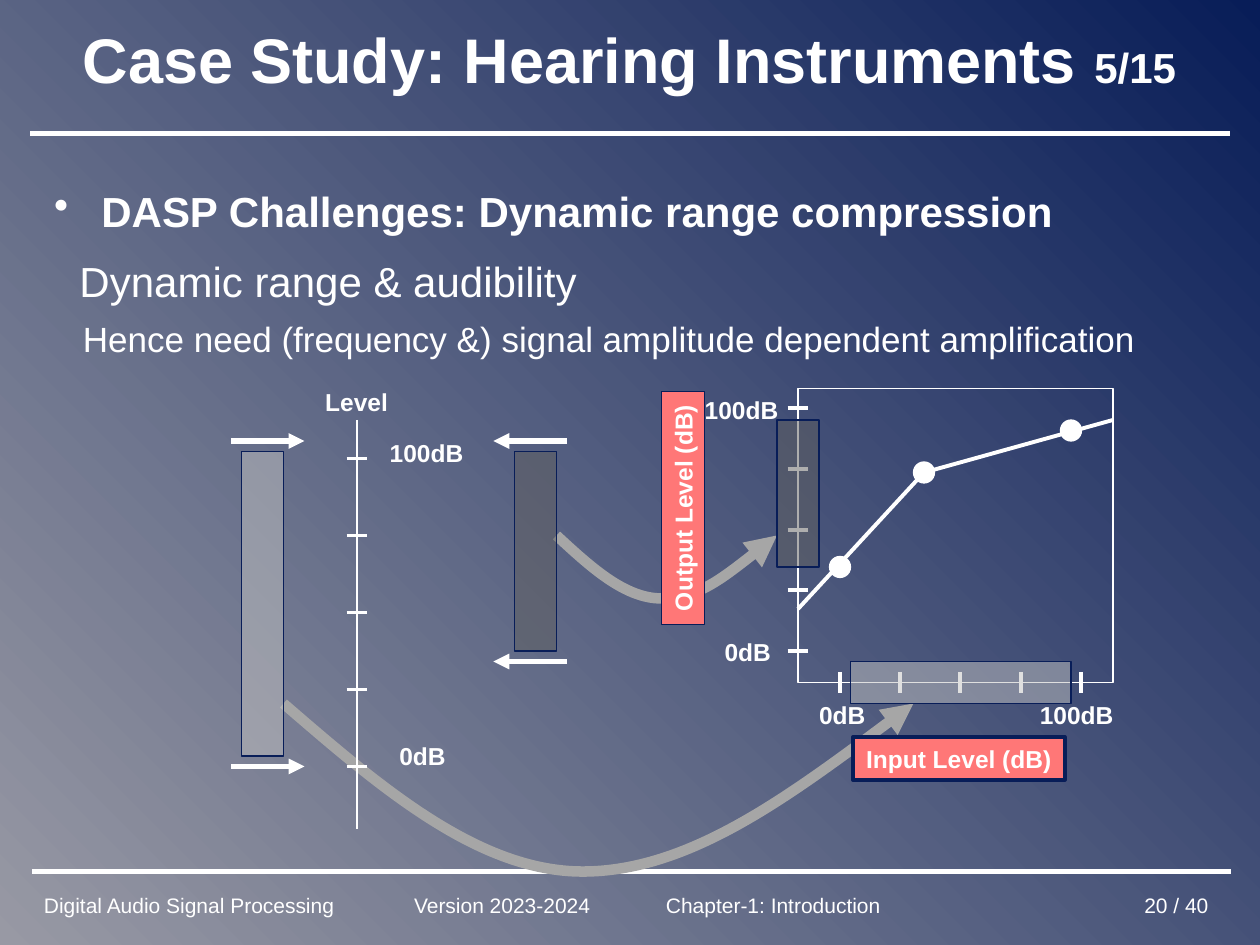
"""Build a slide on dynamic range compression in hearing instruments."""
from dataclasses import dataclass
from typing import NamedTuple, Optional

from lxml.etree import SubElement as Sub
from pptx import Presentation
from pptx.dml.color import RGBColor as Rgb
from pptx.enum.shapes import MSO_CONNECTOR as Link, MSO_SHAPE as Kind
from pptx.enum.text import MSO_ANCHOR as Anchor, PP_ALIGN as Align
from pptx.oxml.ns import qn
from pptx.util import Pt


@dataclass(frozen=True)
class Theme:
    font: str = "Arial"
    white: Rgb = Rgb(0xFF, 0xFF, 0xFF)
    navy: Rgb = Rgb(0x08, 0x1D, 0x58)
    haze: Rgb = Rgb(0x98, 0x99, 0xA4)
    curve: Rgb = Rgb(0xA6, 0xA6, 0xA6)
    light: Rgb = Rgb(0xC0, 0xC0, 0xC0)
    dark: Rgb = Rgb(0x5F, 0x5F, 0x5F)
    red: Rgb = Rgb(0xFF, 0x77, 0x77)
    title: int = 36
    head: int = 24
    body: int = 20
    label: int = 14
    foot: int = 12


class Box(NamedTuple):
    left: float
    top: float
    width: float
    height: float
    turn: float = 0


class Stroke(NamedTuple):
    x1: float
    y1: float
    x2: float
    y2: float
    weight: float = 2.25
    arrow: bool = False


class Label(NamedTuple):
    text: str
    box: Box


class Point(NamedTuple):
    text: str
    size: int
    bold: bool
    indent: float
    gap: float
    bullet: bool = False


THEME = Theme()

RULES = [Stroke(702.7, 76.3, 17.3, 76.3, 3), Stroke(703.4, 498.2, 18, 498.2, 3)]
FOOTER = [
    Label("Digital Audio Signal Processing", Box(18, 504, 190, 26.6)),
    Label("Version 2023-2024", Box(229.5, 504, 120, 26.6)),
    Label("Chapter-1: Introduction", Box(373.5, 504, 150, 26.6)),
]
PAGE = Label("20 / 40", Box(553.7, 504, 144, 26.6))
CURVES = [
    [(318, 306), (337.5, 324), (357, 342), (378, 342), (399, 342), (421.5, 324), (444, 306)],
    [(162, 402), (217.5, 450), (273.5, 498), (333, 498), (393, 498), (458, 450), (522, 402)],
]
POINTS = [
    Point("DASP Challenges: Dynamic range compression", THEME.head, True, 27, 0, True),
    Point("Dynamic range & audibility", THEME.head, False, 14.5, 11),
    Point("Hence need (frequency &) signal amplitude dependent amplification",
          THEME.body, False, 16.5, 7),
]
LEVEL = [Stroke(204, 240, 204, 474, 0.75)] + [
    Stroke(198, 262 + 44 * i, 210, 262 + 44 * i) for i in range(5)]
ARROWS = [Stroke(132, y, 174, y, 3, True) for y in (438, 252)] + [
    Stroke(324, y, 282, y, 3, True) for y in (252, 378)]
TICKS = [Stroke(480 + 34.4 * i, 384, 480 + 34.4 * i, 396) for i in range(5)] + [
    Stroke(450, 233.2 + 34.7 * i, 462, 233.2 + 34.7 * i) for i in range(5)]
GAIN = [Stroke(528, 270, 636, 240), Stroke(528, 270, 456, 348)]
KNOTS = [(480, 324), (612, 246), (528, 270)]
LABELS = [
    Label("Level", Box(178.6, 217.4, 50.4, 24.5)),
    Label("100dB", Box(215.3, 246.2, 56.9, 24.5)),
    Label("0dB", Box(221, 419.8, 41, 24.5)),
    Label("0dB", Box(460.8, 396, 41, 24.5)),
    Label("100dB", Box(586.8, 396, 56.9, 24.5)),
    Label("0dB", Box(406.8, 360, 41, 24.5)),
    Label("100dB", Box(395.3, 222, 56.9, 24.5)),
]


def style(font, size: Optional[int] = None, bold: bool = False) -> None:
    font.name, font.bold = THEME.font, bold
    font.color.rgb = THEME.white
    if size:
        font.size = Pt(size)


def pen(line, color: Rgb, weight: float, arrow: bool = False) -> None:
    line.color.rgb = color
    line.width = Pt(weight)
    if arrow:
        Sub(line._get_or_add_ln(), qn("a:tailEnd"), type="triangle")


def write(shape, text: str, size: int, bold: bool = False, align=Align.CENTER) -> None:
    frame = shape.text_frame
    frame.word_wrap, frame.vertical_anchor = False, Anchor.MIDDLE
    para = frame.paragraphs[0]
    para.text, para.alignment = text, align
    style(para.font, size, bold)


def add_text(slide, box: Box):
    return slide.shapes.add_textbox(*map(Pt, box[:4]))


def add_line(slide, stroke: Stroke) -> None:
    line = slide.shapes.add_connector(Link.STRAIGHT, *map(Pt, stroke[:4]))
    pen(line.line, THEME.white, stroke.weight, stroke.arrow)
    Sub(line._element.spPr, qn("a:effectLst"))


def add_form(slide, kind, box: Box, fill: Optional[Rgb], edge: Rgb,
             weight: float = 0.75, alpha: Optional[int] = None):
    shape = slide.shapes.add_shape(kind, *map(Pt, box[:4]))
    shape.rotation, shape.shadow.inherit = box.turn, False
    if fill is None:
        shape.fill.background()
    else:
        shape.fill.solid()
        shape.fill.fore_color.rgb = fill
    if alpha:
        color = shape._element.spPr.find(qn("a:solidFill"))[0]
        Sub(color, qn("a:alpha"), val=str(alpha * 1000))
    pen(shape.line, edge, weight)
    return shape


def add_bar(slide, box: Box, fill: Rgb) -> None:
    add_form(slide, Kind.RECTANGLE, box, fill, THEME.navy, alpha=50)


def add_tag(slide, tag: Label, weight: float) -> None:
    shape = add_form(slide, Kind.RECTANGLE, tag.box, THEME.red, THEME.navy, weight)
    write(shape, tag.text, THEME.label, True)


def add_curve(slide, knots: list) -> None:
    spots = [(Pt(x), Pt(y)) for x, y in knots]
    form = slide.shapes.build_freeform(*spots[0])
    form.add_line_segments(spots[1:], close=False)
    shape = form.convert_to_shape()
    shape.shadow.inherit = False
    shape.fill.background()
    pen(shape.line, THEME.curve, 6, True)
    legs = shape._element.xpath(".//a:lnTo")
    route = legs[0].getparent()
    for i in range(0, len(legs), 3):
        bend = Sub(route, qn("a:cubicBezTo"))
        for leg in legs[i:i + 3]:
            bend.append(leg[0])
            route.remove(leg)


def add_title(slide) -> None:
    frame = add_text(slide, Box(23, 7.2, 673.2, 61.2)).text_frame
    frame.word_wrap, frame.vertical_anchor = True, Anchor.MIDDLE
    para = frame.paragraphs[0]
    para.alignment, para.line_spacing = Align.CENTER, 0.75
    style(para.font, bold=True)
    for text, size in (("Case Study: Hearing Instruments ", THEME.title), ("5/15", THEME.head)):
        run = para.add_run()
        run.text, run.font.size = text, Pt(size)


def add_body(slide) -> None:
    frame = add_text(slide, Box(23.8, 102.5, 696, 105)).text_frame
    frame.word_wrap = True
    for i, point in enumerate(POINTS):
        para = frame.add_paragraph() if i else frame.paragraphs[0]
        para.text = point.text
        props = para._p.get_or_add_pPr()
        props.set("marL", str(Pt(point.indent)))
        if point.bullet:
            props.set("indent", str(-Pt(point.indent)))
            Sub(props, qn("a:buChar"), char="•")
        para.space_before = Pt(point.gap)
        style(para.font, point.size, point.bold)


def main() -> None:
    deck = Presentation()
    deck.slide_width, deck.slide_height = Pt(720), Pt(540)
    slide = deck.slides.add_slide(deck.slide_layouts[6])
    fill = slide.background.fill
    fill.gradient()
    fill.gradient_angle = 45
    for stop, color in zip(fill.gradient_stops, (THEME.haze, THEME.navy)):
        stop.color.rgb = color
    for rule in RULES:
        add_line(slide, rule)
    for part in FOOTER:
        write(add_text(slide, part.box), part.text, THEME.foot, align=Align.LEFT)
    write(add_text(slide, PAGE.box), PAGE.text, THEME.foot, align=Align.RIGHT)
    for curve in CURVES:
        add_curve(slide, curve)
    add_body(slide)
    add_title(slide)
    for stroke in LEVEL + ARROWS:
        add_line(slide, stroke)
    add_bar(slide, Box(138, 258, 24, 174), THEME.light)
    add_bar(slide, Box(294, 258, 24, 114), THEME.dark)
    add_form(slide, Kind.RECTANGLE, Box(456, 222, 180, 168), None, THEME.white)
    add_tag(slide, Label("Input Level (dB)", Box(487.4, 421.2, 121, 24.5)), 2.25)
    add_tag(slide, Label("Output Level (dB)", Box(323.6, 278, 133.2, 24.5, 270)), 0.75)
    for stroke in TICKS + GAIN:
        add_line(slide, stroke)
    for x, y in KNOTS:
        add_form(slide, Kind.OVAL, Box(x - 6, y - 6, 12, 12), THEME.white, THEME.white)
    for label in LABELS:
        write(add_text(slide, label.box), label.text, THEME.label, True)
    add_bar(slide, Box(444, 240, 24, 84), THEME.dark)
    add_bar(slide, Box(537, 327, 24, 126, 90), THEME.light)
    deck.save("out.pptx")


if __name__ == "__main__":
    main()
